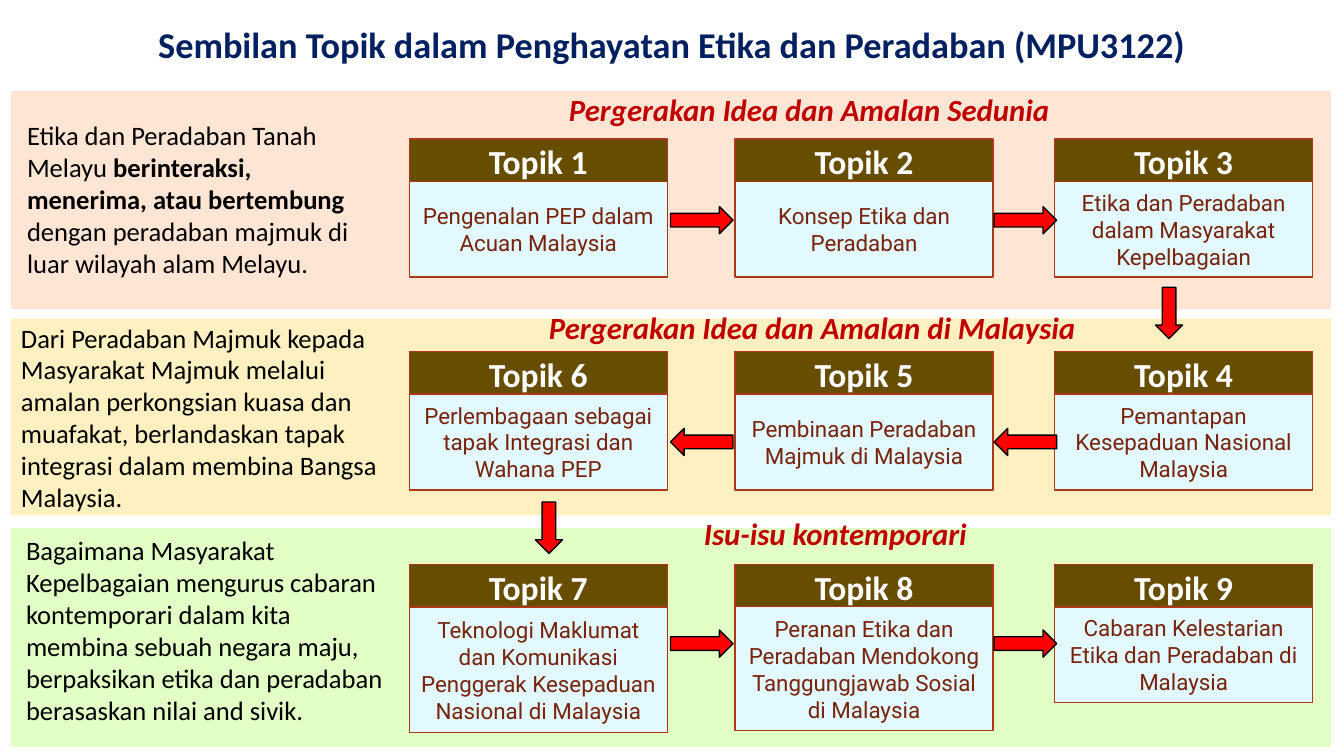
from lxml import etree
from pptx import Presentation
from pptx.dml.color import RGBColor
from pptx.enum.shapes import MSO_SHAPE as Preset
from pptx.enum.text import MSO_ANCHOR as Anchor, MSO_AUTO_SIZE as AutoSize, PP_ALIGN as Align
from pptx.oxml.ns import qn
from pptx.util import Inches, Pt

PEACH = RGBColor(0xFF, 0xE6, 0xD4)
CREAM = RGBColor(0xFF, 0xF0, 0xC2)
GREEN = RGBColor(0xCC, 0xFF, 0x99)
BROWN = RGBColor(0x66, 0x4D, 0x00)
ICE = RGBColor(0xE1, 0xF9, 0xFF)
RUST = RGBColor(0xAC, 0x38, 0x19)
MAROON = RGBColor(0x78, 0x23, 0x0D)
CRIMSON = RGBColor(0xC0, 0x00, 0x00)
RED = RGBColor(0xFF, 0x00, 0x00)
NAVY = RGBColor(0x00, 0x20, 0x60)
BLACK = RGBColor(0x00, 0x00, 0x00)
WHITE = RGBColor(0xFF, 0xFF, 0xFF)

TITLE_FONT = {"name": "Calibri", "size": Pt(25.9), "bold": True}
HEADING_FONT = {"name": "Calibri", "size": Pt(22), "bold": True, "italic": True}
NOTE_FONT = {"name": "Calibri", "size": Pt(19)}
NUMBER_FONT = {"name": "Calibri", "size": Pt(24), "bold": True}
DETAIL_FONT = {"name": "Roboto", "size": Pt(16)}

TOPIC_LEFTS = (3.95, 7.18, 10.35)
ARROW_LEFTS = (6.54, 9.75)
TOPIC_WIDTH = 2.56

BANDS = [
    {
        "box": (0.11, 0.9, 13.09, 2.17), "fill": PEACH, "opacity": 100,
        "heading": "Pergerakan Idea dan Amalan Sedunia", "heading_at": (4.74, -0.01),
        "note": [("Etika dan Peradaban Tanah Melayu ", False),
                 ("berinteraksi, menerima, atau bertembung ", True),
                 ("dengan peradaban majmuk di luar wilayah alam Melayu.", False)],
        "note_box": (0.06, 0.23, 3.56, 1.7),
        "topics_top": 0.48, "arrow": Preset.RIGHT_ARROW, "arrows_top": 1.15,
        "topics": [(1, "Pengenalan PEP dalam Acuan Malaysia", 0.95),
                   (2, "Konsep Etika dan Peradaban", 0.95),
                   (3, "Etika dan Peradaban dalam Masyarakat Kepelbagaian", 0.95)],
    },
    {
        "box": (0.11, 3.16, 13.09, 1.95), "fill": CREAM, "opacity": 100,
        "heading": "Pergerakan Idea dan Amalan di Malaysia", "heading_at": (4.77, -0.1),
        "note": [("Dari Peradaban Majmuk kepada Masyarakat Majmuk melalui amalan perkongsian "
                  "kuasa dan muafakat, berlandaskan tapak integrasi dalam membina Bangsa "
                  "Malaysia.", False)],
        "note_box": (0, -0.02, 3.93, 2.02),
        "topics_top": 0.33, "arrow": Preset.LEFT_ARROW, "arrows_top": 1.09,
        "topics": [(6, "Perlembagaan sebagai tapak Integrasi dan Wahana PEP", 0.95),
                   (5, "Pembinaan Peradaban Majmuk di Malaysia", 0.95),
                   (4, "Pemantapan Kesepaduan Nasional Malaysia", 0.95)],
    },
    {
        "box": (0.11, 5.24, 13.09, 2.17), "fill": GREEN, "opacity": 56,
        "heading": "Isu-isu kontemporari", "heading_at": (5, -0.14),
        "note": [("Bagaimana Masyarakat Kepelbagaian mengurus cabaran kontemporari dalam kita "
                  "membina sebuah negara maju, berpaksikan etika dan peradaban berasaskan "
                  "nilai and sivik.", False)],
        "note_box": (0.05, 0.01, 3.89, 2.02),
        "topics_top": 0.36, "arrow": Preset.RIGHT_ARROW, "arrows_top": 1.01,
        "topics": [(7, "Teknologi Maklumat dan Komunikasi Penggerak Kesepaduan Nasional "
                       "di Malaysia", 1.25),
                   (8, "Peranan Etika dan Peradaban Mendokong Tanggungjawab Sosial "
                       "di Malaysia", 1.23),
                   (9, "Cabaran Kelestarian Etika dan Peradaban di Malaysia", 0.95)],
    },
]
DOWN_ARROWS = [(11.46, 2.85), (5.31, 4.98)]


def set_font(font, formats, color):
    for attribute, value in formats.items():
        setattr(font, attribute, value)
    font.color.rgb = color


def add_block(slide, preset, box, fill, line=None):
    block = slide.shapes.add_shape(preset, *map(Inches, box))
    block.shadow.inherit = False
    block.fill.solid()
    block.fill.fore_color.rgb = fill
    if line is None:
        block.line.fill.background()
    else:
        block.line.color.rgb = line
        block.line.width = Pt(1)
    return block


def write_line(frame, text, formats, color, anchor, spacing=None):
    frame.word_wrap = True
    frame.vertical_anchor = anchor
    paragraph = frame.paragraphs[0]
    paragraph.alignment = Align.CENTER
    paragraph.line_spacing = spacing
    run = paragraph.add_run()
    run.text = text
    set_font(run.font, formats, color)


def add_title(slide, left, top, width, height):
    title = slide.shapes.title
    title.left, title.top, title.width, title.height = map(Inches, (left, top, width, height))
    title.text_frame.auto_size = AutoSize.NONE
    write_line(title.text_frame, "Sembilan Topik dalam Penghayatan Etika dan Peradaban (MPU3122)",
               TITLE_FONT, NAVY, Anchor.TOP, 0.8)


def add_note(slide, runs, left, top, width, height):
    note = slide.shapes.add_textbox(*map(Inches, (left, top, width, height))).text_frame
    note.word_wrap = True
    note.auto_size = AutoSize.SHAPE_TO_FIT_TEXT
    for text, bold in runs:
        run = note.paragraphs[0].add_run()
        run.text = text
        set_font(run.font, {**NOTE_FONT, "bold": bold}, BLACK)


def add_topic(slide, number, detail, left, top, detail_height):
    header = add_block(slide, Preset.RECTANGLE, (left, top, TOPIC_WIDTH, 0.44), BROWN, RUST)
    write_line(header.text_frame, f"Topik {number}", NUMBER_FONT, WHITE, Anchor.MIDDLE)
    body = add_block(slide, Preset.RECTANGLE, (left, top + 0.42, TOPIC_WIDTH, detail_height),
                     ICE, RUST)
    write_line(body.text_frame, detail, DETAIL_FONT, MAROON, Anchor.MIDDLE)


def add_band(slide, band, left, top, width, height):
    background = add_block(slide, Preset.RECTANGLE, (left, top, width, height), band["fill"])
    if band["opacity"] < 100:
        color = background.fill._xPr.find(".//" + qn("a:srgbClr"))
        etree.SubElement(color, qn("a:alpha"), val=str(band["opacity"] * 1000))

    for topic_left, (number, detail, detail_height) in zip(TOPIC_LEFTS, band["topics"]):
        add_topic(slide, number, detail, left + topic_left, top + band["topics_top"],
                  detail_height)
    for arrow_left in ARROW_LEFTS:
        add_block(slide, band["arrow"],
                  (left + arrow_left, top + band["arrows_top"], 0.62, 0.27), RED, BLACK)

    note_left, note_top, note_width, note_height = band["note_box"]
    add_note(slide, band["note"], left + note_left, top + note_top, note_width, note_height)

    heading_left, heading_top = band["heading_at"]
    heading = slide.shapes.add_textbox(
        *map(Inches, (left + heading_left, top + heading_top, 6.35, 0.48)))
    write_line(heading.text_frame, band["heading"], HEADING_FONT, CRIMSON, Anchor.TOP, 0.9)


def main():
    presentation = Presentation()
    presentation.slide_width = Inches(13.33)
    presentation.slide_height = Inches(7.5)
    slide = presentation.slides.add_slide(presentation.slide_layouts[5])
    add_title(slide, 1.02, 0.25, 11.29, 0.48)
    for band in BANDS:
        add_band(slide, band, *band["box"])
    for left, top in DOWN_ARROWS:
        add_block(slide, Preset.DOWN_ARROW, (left, top, 0.27, 0.51), RED, BLACK)
    presentation.save("out.pptx")


if __name__ == "__main__":
    main()
